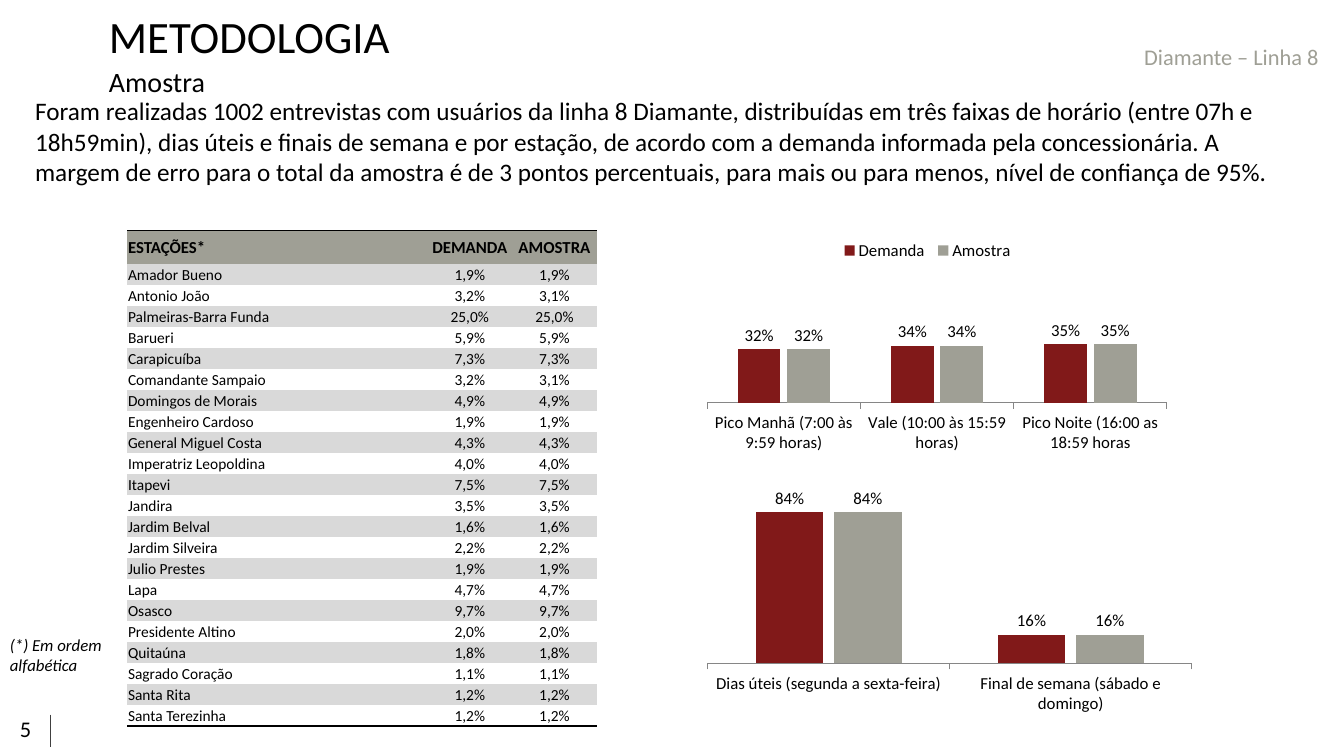
from lxml import etree
from pptx import Presentation
from pptx.chart.data import CategoryChartData
from pptx.dml.color import RGBColor
from pptx.enum.chart import XL_CHART_TYPE, XL_LABEL_POSITION, XL_LEGEND_POSITION, XL_TICK_LABEL_POSITION, XL_TICK_MARK
from pptx.enum.shapes import MSO_CONNECTOR
from pptx.enum.text import MSO_ANCHOR, PP_ALIGN
from pptx.oxml import parse_xml
from pptx.oxml.ns import nsdecls, qn
from pptx.util import Inches, Pt

COLUMNS = XL_CHART_TYPE.COLUMN_CLUSTERED
LABEL_ABOVE = XL_LABEL_POSITION.OUTSIDE_END
LEGEND_TOP = XL_LEGEND_POSITION.TOP
LABELS_LOW = XL_TICK_LABEL_POSITION.LOW
TICK_OUT, TICK_NONE = XL_TICK_MARK.OUTSIDE, XL_TICK_MARK.NONE
STRAIGHT = MSO_CONNECTOR.STRAIGHT
MIDDLE = MSO_ANCHOR.MIDDLE
LEFT, CENTER = PP_ALIGN.LEFT, PP_ALIGN.CENTER

FONT = "Calibri"
COLORS = {"text": "000000", "gray": "9F9F95", "red": "811919", "band": "D9D9D9",
          "divider": "404040", "axis": "868686"}
NO_STYLE = "{2D5ABB26-0587-4C30-8999-92F81FD0307C}"
PERCENT = '0"%"'

HEADERS = ("ESTAÇÕES*", "DEMANDA", "AMOSTRA")
STATIONS = [
    ("Amador Bueno", "1,9%", "1,9%"),
    ("Antonio João", "3,2%", "3,1%"),
    ("Palmeiras-Barra Funda", "25,0%", "25,0%"),
    ("Barueri", "5,9%", "5,9%"),
    ("Carapicuíba", "7,3%", "7,3%"),
    ("Comandante Sampaio", "3,2%", "3,1%"),
    ("Domingos de Morais", "4,9%", "4,9%"),
    ("Engenheiro Cardoso", "1,9%", "1,9%"),
    ("General Miguel Costa", "4,3%", "4,3%"),
    ("Imperatriz Leopoldina", "4,0%", "4,0%"),
    ("Itapevi", "7,5%", "7,5%"),
    ("Jandira", "3,5%", "3,5%"),
    ("Jardim Belval", "1,6%", "1,6%"),
    ("Jardim Silveira", "2,2%", "2,2%"),
    ("Julio Prestes", "1,9%", "1,9%"),
    ("Lapa", "4,7%", "4,7%"),
    ("Osasco", "9,7%", "9,7%"),
    ("Presidente Altino", "2,0%", "2,0%"),
    ("Quitaúna", "1,8%", "1,8%"),
    ("Sagrado Coração", "1,1%", "1,1%"),
    ("Santa Rita", "1,2%", "1,2%"),
    ("Santa Terezinha", "1,2%", "1,2%"),
]
INTRO = ("Foram realizadas 1002 entrevistas com usuários da linha 8 Diamante, distribuídas em três "
         "faixas de horário (entre 07h e 18h59min), dias úteis e finais de semana e por estação, de "
         "acordo com a demanda informada pela concessionária. A margem de erro para o total da amostra "
         "é de 3 pontos percentuais, para mais ou para menos, nível de confiança de 95%.")
PERIODS = {"Pico Manhã (7:00 às 9:59 horas)": 32, "Vale (10:00 às 15:59 horas)": 34,
           "Pico Noite (16:00 as 18:59 horas": 35}
DAYS = {"Dias úteis (segunda a sexta-feira)": 84, "Final de semana (sábado e domingo)": 16}


def rgb(name):
    return RGBColor.from_string(COLORS[name])


def inches(box):
    return [Inches(length) for length in box]


def style_font(font, size, color="text", bold=False, italic=False):
    font.name, font.size, font.bold, font.italic = FONT, Pt(size), bold, italic
    font.color.rgb = rgb(color)


def add_text(slide, box, lines, color="text", wrap=True, italic=False):
    """Add a text box with one paragraph for each (text, size) pair."""
    frame = slide.shapes.add_textbox(*inches(box)).text_frame
    frame.word_wrap = wrap
    for index, (text, size) in enumerate(lines):
        paragraph = frame.add_paragraph() if index else frame.paragraphs[0]
        if index:
            paragraph.space_before = Pt(1)
        run = paragraph.add_run()
        run.text = text
        style_font(run.font, size, color, italic=italic)
    return frame


def add_heading(slide, box):
    frame = add_text(slide, box, [("METODOLOGIA", 32), ("Amostra", 20)])
    frame.margin_left = frame.margin_right = frame.margin_bottom = 0
    frame.margin_top = Inches(0.01)


def add_page_number(slide, box):
    left, top, _, height = box
    add_text(slide, box, [("5", 16)], wrap=False)
    ends = (left + 0.4, top + 0.04, left + 0.4, top + height - 0.01)
    divider = slide.shapes.add_connector(STRAIGHT, *inches(ends))
    divider.line.color.rgb = rgb("divider")
    divider.line.width = Pt(0.5)
    etree.SubElement(divider._element.spPr, qn("a:effectLst"))


def add_border(cell, side):
    """Draw a 1 pt border on a side, 'T' or 'B'."""
    border = parse_xml(f'<a:ln{side} {nsdecls("a")} w="12700"><a:solidFill>'
                       f'<a:srgbClr val="{COLORS["text"]}"/></a:solidFill></a:ln{side}>')
    cell._tc.get_or_add_tcPr().insert(0, border)


def fill_cell(cell, text, size, fill, align, bold):
    cell.margin_left = cell.margin_right = cell.margin_top = Inches(0.01)
    cell.margin_bottom = 0
    cell.vertical_anchor = MIDDLE
    if fill:
        cell.fill.solid()
        cell.fill.fore_color.rgb = rgb(fill)
    else:
        cell.fill.background()
    paragraph = cell.text_frame.paragraphs[0]
    paragraph.alignment = align
    run = paragraph.add_run()
    run.text = text
    style_font(run.font, size, bold=bold)


def add_station_table(slide, box):
    rows = [HEADERS, *STATIONS]
    height, header_height = box[3], 0.33
    table = slide.shapes.add_table(len(rows), len(HEADERS), *inches(box)).table
    table.first_row = table.horz_banding = False
    table._tbl.tblPr.find(qn("a:tableStyleId")).text = NO_STYLE
    for column, width in zip(table.columns, (2.98, 0.84, 0.84)):
        column.width = Inches(width)
    for index, values in enumerate(rows):
        header = index == 0
        table.rows[index].height = Inches(header_height if header else (height - header_height) / len(STATIONS))
        fill = "gray" if header else "band" if index % 2 else None
        for position, text in enumerate(values):
            cell = table.cell(index, position)
            fill_cell(cell, text, 12 if header else 11, fill, CENTER if position else LEFT, header)
            if header:
                add_border(cell, "T")
            elif index == len(STATIONS):
                add_border(cell, "B")


def set_layout(parent, after, area, inner=False):
    """Fix the area of a chart part, in fractions of the chart."""
    for layout in parent.findall(qn("c:layout")):
        parent.remove(layout)
    target = '<c:layoutTarget val="inner"/>' if inner else ""
    modes = "".join(f'<c:{axis}Mode val="edge"/>' for axis in "xy")
    sizes = "".join(f'<c:{key} val="{value}"/>' for key, value in zip("xywh", area))
    layout = parse_xml(f'<c:layout {nsdecls("c")}><c:manualLayout>{target}{modes}{sizes}'
                       '</c:manualLayout></c:layout>')
    if after is None:
        parent.insert(0, layout)
    else:
        after.addnext(layout)


def add_column_chart(slide, box, shares, plot_area, legend_area=None):
    data = CategoryChartData(number_format=PERCENT)
    data.categories = list(shares)
    for name in ("Demanda", "Amostra"):
        data.add_series(name, list(shares.values()))
    chart = slide.shapes.add_chart(COLUMNS, *inches(box), data).chart
    style_font(chart.font, 12)
    chart.has_title = False
    chart.has_legend = legend_area is not None
    if chart.has_legend:
        chart.legend.position = LEGEND_TOP
        chart.legend.include_in_layout = False
        legend = chart.legend._element
        set_layout(legend, legend.find(qn("c:legendPos")), legend_area)

    plot = chart.plots[0]
    plot.vary_by_categories = False
    plot.gap_width, plot.overlap = 142, -16
    for series, color in zip(plot.series, ("red", "gray")):
        series.format.fill.solid()
        series.format.fill.fore_color.rgb = rgb(color)
        labels = series.data_labels
        labels.show_value = True
        labels.number_format, labels.number_format_is_linked = PERCENT, False
        labels.position = LABEL_ABOVE
        style_font(labels.font, 12)

    values, categories = chart.value_axis, chart.category_axis
    values.minimum_scale, values.maximum_scale = 0, 100
    values.has_major_gridlines = values.visible = False
    categories.major_tick_mark, categories.minor_tick_mark = TICK_OUT, TICK_NONE
    categories.tick_label_position = LABELS_LOW
    categories.format.line.color.rgb = rgb("axis")
    categories.format.line.width = Pt(0.75)
    set_layout(chart._chartSpace.chart.plotArea, None, plot_area, inner=True)


def main():
    presentation = Presentation()
    presentation.slide_width, presentation.slide_height = Inches(13.33), Inches(7.5)
    slide = presentation.slides.add_slide(presentation.slide_layouts[6])
    add_page_number(slide, (0.1, 7.05, 0.56, 0.37))
    add_text(slide, (11.25, 0.38, 1.95, 0.37), [("Diamante – Linha 8", 16)], "gray", wrap=False)
    add_column_chart(slide, (6.92, 1.92, 4.75, 2.63), PERIODS,
                     (0.02, 0.16, 0.96, 0.63), (0.29, 0.17, 0.38, 0.09))
    add_text(slide, (0.25, 0.9, 12.42, 1.31), [(INTRO, 18)])
    add_heading(slide, (1.08, 0.08, 9.99, 0.9))
    add_station_table(slide, (1.26, 2.29, 4.67, 4.92))
    add_text(slide, (0, 6.25, 1.17, 0.5), [("(*) Em ordem alfabética", 12)], italic=True)
    add_column_chart(slide, (6.92, 4.75, 5, 2.38), DAYS, (0.02, 0.02, 0.96, 0.75))
    presentation.save("out.pptx")


if __name__ == "__main__":
    main()
